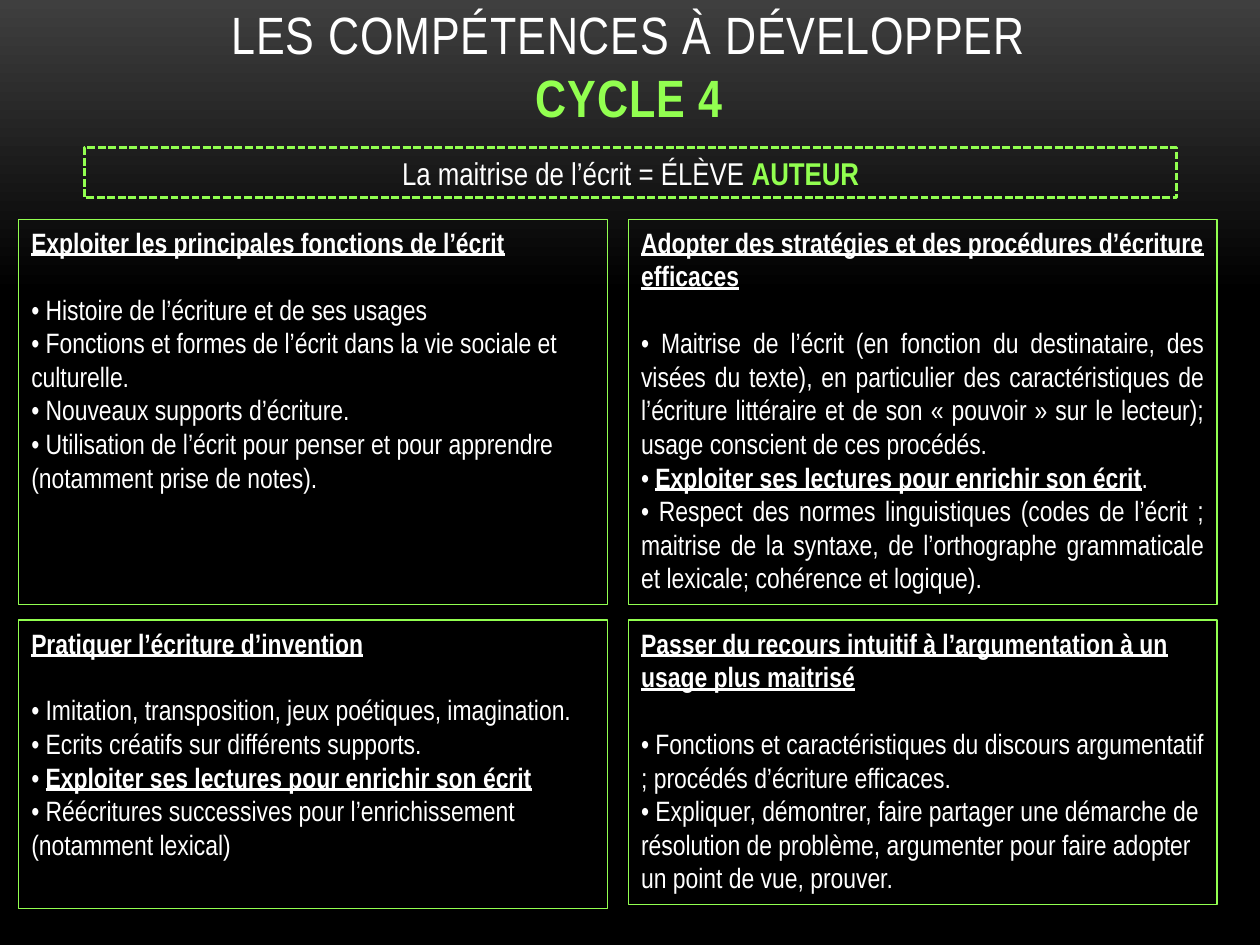
from pptx import Presentation
from pptx.dml.color import RGBColor
from pptx.enum.dml import MSO_LINE
from pptx.enum.shapes import MSO_SHAPE
from pptx.enum.text import MSO_ANCHOR, MSO_AUTO_SIZE, PP_ALIGN
from pptx.oxml.ns import qn
from pptx.util import Inches, Pt

WHITE = RGBColor(0xFF, 0xFF, 0xFF)
BLACK = RGBColor(0x00, 0x00, 0x00)
GREY = RGBColor(0x3F, 0x3F, 0x3F)
GREEN = RGBColor(0x92, 0xFF, 0x50)


def format_paragraph(paragraph, size, alignment):
    paragraph.alignment = alignment
    paragraph.font.name = "Arial Narrow"
    paragraph.font.size = Pt(size)
    paragraph.font.color.rgb = WHITE


def add_box(left, top, width, height, line_width):
    shape = slide.shapes.add_shape(
        MSO_SHAPE.RECTANGLE, Inches(left), Inches(top), Inches(width), Inches(height))
    shape.shadow.inherit = False
    shape.fill.background()
    shape.line.color.rgb = GREEN
    shape.line.width = Pt(line_width)
    shape.text_frame.word_wrap = True
    shape.text_frame.auto_size = MSO_AUTO_SIZE.SHAPE_TO_FIT_TEXT
    shape.text_frame.vertical_anchor = MSO_ANCHOR.TOP
    return shape


presentation = Presentation()
presentation.slide_width = Inches(10)
presentation.slide_height = Inches(7.5)
slide = presentation.slides.add_slide(presentation.slide_layouts[5])

# Background: grey fading to black from the top
background = slide.background.fill
background.gradient()
background.gradient_angle = 270
for stop, color, position in zip(background.gradient_stops, (GREY, BLACK), (0, 0.31)):
    stop.color.rgb = color
    stop.position = position

# Title
title = slide.shapes.title
title.left, title.top = Inches(0.66), Inches(0)
title.width, title.height = Inches(8.67), Inches(1.07)
title.text_frame.auto_size = MSO_AUTO_SIZE.NONE
title.text_frame.vertical_anchor = MSO_ANCHOR.BOTTOM
paragraph = title.text_frame.paragraphs[0]
format_paragraph(paragraph, 30, PP_ALIGN.CENTER)
paragraph.add_run().text = "LES COMPÉTENCES À DÉVELOPPER"
paragraph.add_line_break()
cycle = paragraph.add_run()
cycle.text = "CYCLE 4"
cycle.font.bold = True
cycle.font.color.rgb = GREEN
for run in paragraph.runs:
    run.font.language_id = None
for properties in title.element.iter(qn("a:rPr")):
    properties.set("spc", "50")

# Four skill panels: left, top, height, fill, alignment, heading, items
# An item is a list of runs; every second run is emphasised
LECTURES = "Exploiter ses lectures pour enrichir son écrit"
panels = [
    (0.15, 1.74, 3.06, None, PP_ALIGN.LEFT,
     "Exploiter les principales fonctions de l’écrit",
     [["• Histoire de l’écriture et de ses usages"],
      ["• Fonctions et formes de l’écrit dans la vie sociale et culturelle."],
      ["• Nouveaux supports d’écriture."],
      ["• Utilisation de l’écrit pour penser et pour apprendre (notamment prise de notes)."]]),
    (4.99, 1.74, 3.06, None, PP_ALIGN.JUSTIFY,
     "Adopter des stratégies et des procédures d’écriture efficaces",
     [["• Maitrise de l’écrit (en fonction du destinataire, des visées du texte), "
       "en particulier des caractéristiques de l’écriture littéraire et de son "
       "« pouvoir » sur le lecteur); usage conscient de ces procédés."],
      ["• ", LECTURES, "."],
      ["• Respect des normes linguistiques (codes de l’écrit ; maitrise de la syntaxe, "
       "de l’orthographe grammaticale et lexicale; cohérence et logique)."]]),
    (0.15, 4.92, 2.29, BLACK, PP_ALIGN.LEFT,
     "Pratiquer l’écriture d’invention",
     [["• Imitation, transposition, jeux poétiques, imagination."],
      ["• Ecrits créatifs sur différents supports."],
      ["• ", LECTURES],
      ["• Réécritures successives pour l’enrichissement (notamment lexical)"]]),
    (4.99, 4.92, 2.26, BLACK, PP_ALIGN.LEFT,
     "Passer du recours intuitif à l’argumentation à un usage plus maitrisé",
     [["• Fonctions et caractéristiques du discours argumentatif ; "
       "procédés d’écriture efficaces."],
      ["• Expliquer, démontrer, faire partager une démarche de résolution de problème, "
       "argumenter pour faire adopter un point de vue, prouver."]]),
]
for left, top, height, fill, alignment, heading, items in panels:
    panel = add_box(left, top, 4.67, height, 0.75)
    if fill is not None:
        panel.fill.solid()
        panel.fill.fore_color.rgb = fill
    paragraph = panel.text_frame.paragraphs[0]
    paragraph.text = heading
    format_paragraph(paragraph, 16, PP_ALIGN.LEFT)
    paragraph.font.bold = True
    paragraph.font.underline = True
    paragraph.space_after = Pt(19)
    for item in items:
        paragraph = panel.text_frame.add_paragraph()
        format_paragraph(paragraph, 16, alignment)
        for index, text in enumerate(item):
            run = paragraph.add_run()
            run.text = text
            if index % 2:
                run.font.bold = True
                run.font.underline = True

# Dashed banner under the title
banner = add_box(0.67, 1.17, 8.67, 0.4, 1.5)
banner.line.dash_style = MSO_LINE.SQUARE_DOT
paragraph = banner.text_frame.paragraphs[0]
format_paragraph(paragraph, 18, PP_ALIGN.CENTER)
paragraph.add_run().text = "La maitrise de l’écrit = ÉLÈVE "
author = paragraph.add_run()
author.text = "AUTEUR"
author.font.bold = True
author.font.color.rgb = GREEN

presentation.save("out.pptx")
